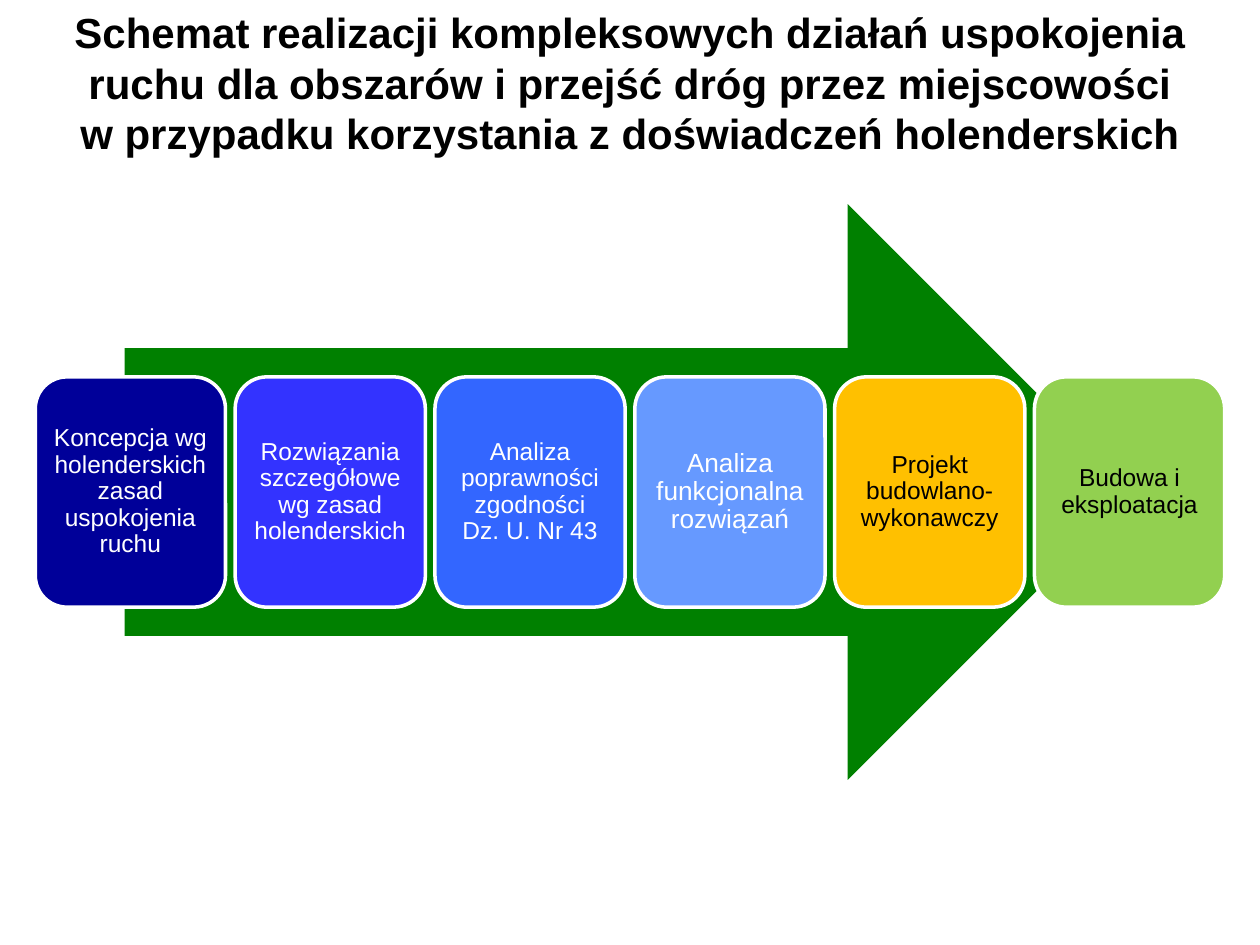
from pptx import Presentation
from pptx.dml.color import RGBColor
from pptx.enum.shapes import MSO_SHAPE as SHAPE
from pptx.enum.text import MSO_ANCHOR as ANCHOR, MSO_AUTO_SIZE as AUTO, PP_ALIGN as ALIGN
from pptx.util import Inches, Pt

COLORS = {
    "arrow": "008000", "navy": "000099", "blue": "3333FF", "azure": "3366FF",
    "sky": "6699FF", "amber": "FFC000", "lime": "92D050",
    "white": "FFFFFF", "black": "000000",
}
TITLE = ("Schemat realizacji kompleksowych działań uspokojenia ruchu dla obszarów "
         "i przejść dróg przez miejscowości\v"
         "w przypadku korzystania z doświadczeń holenderskich")
STEPS = [
    ("Koncepcja wg holenderskich zasad uspokojenia ruchu", "navy", "white", 14),
    ("Rozwiązania szczegółowe wg zasad holenderskich", "blue", "white", 14),
    ("Analiza poprawności zgodności\vDz. U. Nr 43", "azure", "white", 14),
    ("Analiza funkcjonalna rozwiązań", "sky", "white", 15),
    ("Projekt budowlano-wykonawczy", "amber", "black", 14),
    ("Budowa i eksploatacja", "lime", "black", 14),
]


def rgb(name):
    return RGBColor.from_string(COLORS[name])


def write(tf, text, size, color, bold=False):
    tf.word_wrap = True
    tf.auto_size = AUTO.NONE
    tf.vertical_anchor = ANCHOR.MIDDLE
    tf.text = text
    p = tf.paragraphs[0]
    p.alignment = ALIGN.CENTER
    for r in p.runs:
        r.font.name = "Arial"
        r.font.size = Pt(size)
        r.font.bold = bold
        r.font.color.rgb = rgb(color)
    return p


def add_filled(s, kind, x, y, w, h, color):
    sp = s.shapes.add_shape(kind, Inches(x), Inches(y), Inches(w), Inches(h))
    sp.shadow.inherit = False
    sp.fill.solid()
    sp.fill.fore_color.rgb = rgb(color)
    sp.line.fill.background()
    return sp


def set_title(s, x, y, w, h):
    sp = s.shapes.title
    sp.left, sp.top, sp.width, sp.height = map(Inches, (x, y, w, h))
    p = write(sp.text_frame, TITLE, 24, "black", bold=True)
    p.space_before = Pt(0)


def add_step(s, x, y, w, h, text, fill, color, size):
    sp = add_filled(s, SHAPE.ROUNDED_RECTANGLE, x, y, w, h, fill)
    sp.line.color.rgb = rgb("white")
    sp.line.width = Pt(2)
    tf = sp.text_frame
    tf.margin_left = tf.margin_right = tf.margin_top = tf.margin_bottom = Inches(0.06)
    p = write(tf, text, size, color)
    p.line_spacing = 0.9


def add_process(s, x, y, w, h):
    arrow_w = 0.85 * w
    add_filled(s, SHAPE.RIGHT_ARROW, x + (w - arrow_w) / 2, y, arrow_w, h, "arrow")
    step_w, step_h = 1.51, 0.4 * h
    pitch = (w - step_w) / (len(STEPS) - 1)
    for i, step in enumerate(STEPS):
        add_step(s, x + i * pitch, y + (h - step_h) / 2, step_w, step_h, *step)


def main():
    prs = Presentation()
    prs.slide_width, prs.slide_height = Inches(10), Inches(7.5)
    s = prs.slides.add_slide(prs.slide_layouts[5])
    set_title(s, 0, 0, 10, 1.31)
    add_process(s, 0.28, 1.62, 9.44, 4.57)
    prs.save("out.pptx")


if __name__ == "__main__":
    main()
